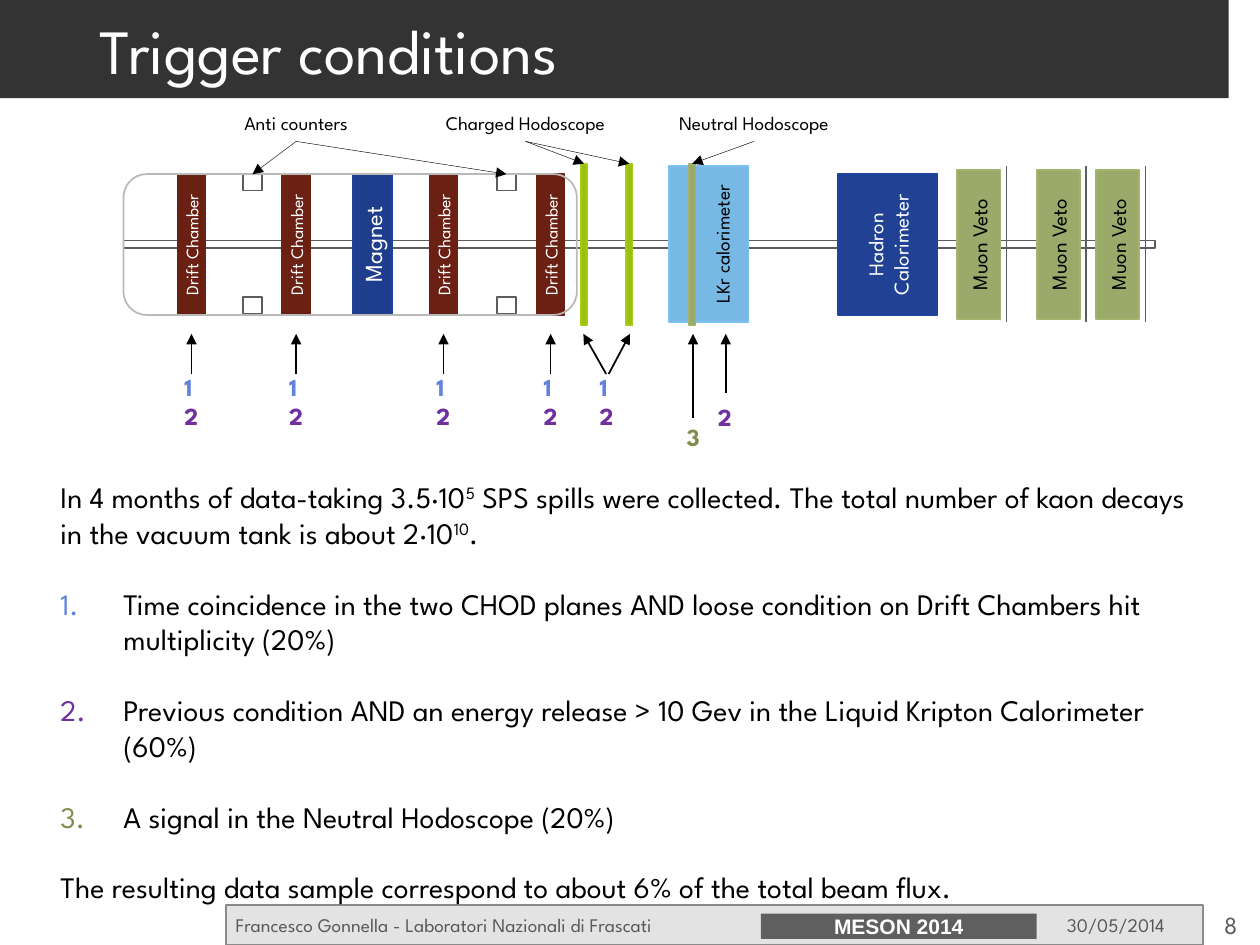
"""Build the slide on trigger conditions along a detector beam line."""
from dataclasses import dataclass
from typing import Optional

from lxml import etree
from pptx import Presentation
from pptx import util as u
from pptx.dml.color import RGBColor
from pptx.enum import shapes, text
from pptx.oxml.ns import qn

FONT = "League Spartan"
WHITE = RGBColor(0xFF, 0xFF, 0xFF)
BLACK = RGBColor(0, 0, 0)
CHARCOAL = RGBColor(0x33, 0x33, 0x33)
TILE_GREY = RGBColor(0x5F, 0x5F, 0x5F)
TEXT_GREY = RGBColor(0x59, 0x59, 0x59)
OUTLINE = RGBColor(0x5C, 0x5C, 0x5C)
TANK_LINE = RGBColor(0xB9, 0xB9, 0xB9)
BAR = RGBColor(0xE3, 0xE3, 0xE3)
BAR_LINE = RGBColor(0x8B, 0x8B, 0x8B)
BROWN = RGBColor(0x6A, 0x20, 0x13)
BROWN_LINE = RGBColor(0x71, 0x1F, 0x12)
NAVY = RGBColor(0x1E, 0x3E, 0x8D)
HADRON = RGBColor(0x20, 0x41, 0x94)
NAVY_LINE = RGBColor(0x1E, 0x43, 0x9E)
SKY = RGBColor(0x77, 0xB8, 0xE4)
SKY_LINE = RGBColor(0x7A, 0xC2, 0xF2)
OLIVE = RGBColor(0x9B, 0xA9, 0x6B)
OLIVE_LINE = RGBColor(0xA3, 0xB3, 0x6E)
LIME = RGBColor(0x9B, 0xBF, 0x15)
LIME_LINE = RGBColor(0xA5, 0xCC, 0x12)
TRIGGER = {"1": RGBColor(0x60, 0x84, 0xDD), "2": RGBColor(0x70, 0x30, 0xA0),
           "3": RGBColor(0x7E, 0x8C, 0x4D)}

CHAMBER_X = (3.58, 5.69, 8.66, 10.82)
CHAMBER_W = 0.56
CHARGED_X = (11.71, 12.62)
MUON_X = (19.3, 20.9, 22.1)
TANK_Y, TANK_H = 3.51, 2.84
ARROW_TIP = 6.73


@dataclass
class Box:
    x: float
    y: float
    w: float
    h: float
    fill: Optional[RGBColor] = None
    line: Optional[RGBColor] = None
    label: str = ""
    size: float = 12
    color: RGBColor = WHITE
    bold: bool = False
    vertical: bool = True
    font: str = FONT
    shape: shapes.MSO_SHAPE = shapes.MSO_SHAPE.RECTANGLE


@dataclass
class Caption:
    x: float
    y: float
    w: float
    h: float
    label: str
    size: float = 11
    color: RGBColor = BLACK
    align: text.PP_ALIGN = text.PP_ALIGN.LEFT
    wrap: bool = True
    anchor: text.MSO_ANCHOR = text.MSO_ANCHOR.MIDDLE


@dataclass
class Arrow:
    x1: float
    y1: float
    x2: float
    y2: float = ARROW_TIP


def style(r, size: float, color: RGBColor, bold: bool = False, font: str = FONT) -> None:
    """Format one run."""
    r.font.name, r.font.size, r.font.bold = font, u.Pt(size), bold
    r.font.color.rgb = color


def set_vertical(tf) -> None:
    """Turn the text to read upwards."""
    tf._txBody.bodyPr.set("vert", "vert270")


def draw_box(slide, b: Box):
    """Draw a detector part or another filled shape."""
    s = slide.shapes.add_shape(b.shape, u.Cm(b.x), u.Cm(b.y), u.Cm(b.w), u.Cm(b.h))
    s.shadow.inherit = False
    if b.fill is None:
        s.fill.background()
    else:
        s.fill.solid()
        s.fill.fore_color.rgb = b.fill
    if b.line is None:
        s.line.fill.background()
    else:
        s.line.color.rgb, s.line.width = b.line, u.Pt(1)
    if b.label:
        tf = s.text_frame
        tf.text = b.label
        tf.vertical_anchor = text.MSO_ANCHOR.MIDDLE
        tf.margin_left = tf.margin_right = tf.margin_top = tf.margin_bottom = 0
        if b.vertical:
            set_vertical(tf)
        p = tf.paragraphs[0]
        p.alignment = text.PP_ALIGN.CENTER
        for r in p.runs:
            style(r, b.size, b.color, b.bold, b.font)
    return s


def draw_caption(slide, c: Caption):
    """Draw a text box with one run in each paragraph."""
    s = slide.shapes.add_textbox(u.Cm(c.x), u.Cm(c.y), u.Cm(c.w), u.Cm(c.h))
    tf = s.text_frame
    tf.text = c.label
    tf.word_wrap = c.wrap
    tf.vertical_anchor = c.anchor
    for p in tf.paragraphs:
        p.alignment = c.align
        for r in p.runs:
            style(r, c.size, c.color)
    return s


def draw_line(slide, a: Arrow, color: RGBColor = BLACK, width: float = 1, arrow: bool = True):
    """Draw a straight connector, with an arrowhead at its end if asked."""
    s = slide.shapes.add_connector(shapes.MSO_CONNECTOR.STRAIGHT, u.Cm(a.x1), u.Cm(a.y1),
                                   u.Cm(a.x2), u.Cm(a.y2))
    s.line.color.rgb, s.line.width = color, u.Pt(width)
    if arrow:
        etree.SubElement(s.line._get_or_add_ln(), qn("a:tailEnd"), type="triangle")
    etree.SubElement(s._element.spPr, qn("a:effectLst"))
    return s


def draw_pointers(slide, label: Caption, targets) -> None:
    """Draw a label and join it to the top of each part it names."""
    caption = draw_caption(slide, label)
    for target in targets:
        s = draw_line(slide, Arrow(0, 0, 1, 1), width=0.25)
        s.begin_connect(caption, 2)
        s.end_connect(target, 0)


def draw_digits(slide, x: float, y: float, digits: str) -> None:
    """Stack trigger numbers in their own colours."""
    s = draw_caption(slide, Caption(x, y, 0.79, 0.25 + 0.6 * len(digits), "\n".join(digits), 14,
                                    wrap=False, anchor=text.MSO_ANCHOR.TOP))
    for p, digit in zip(s.text_frame.paragraphs, digits):
        style(p.runs[0], 14, TRIGGER[digit], True)


def draw_body(slide) -> None:
    """Write the data sample summary and the numbered trigger conditions."""
    tf = slide.shapes.add_textbox(u.Cm(0.97), u.Cm(9.53), u.Cm(23.27), u.Cm(8.2)).text_frame
    tf.word_wrap = True
    p = tf.paragraphs[0]
    for part, raised in (("In 4 months of data-taking 3.5·10", False), ("5", True),
                         (" SPS spills were collected. The total number of kaon decays in the "
                          "vacuum tank is about 2·10", False), ("10", True), (".", False)):
        r = p.add_run()
        r.text = part
        style(r, 17, BLACK)
        if raised:
            r.font._element.set("baseline", "30000")
    for number, line in (
            ("1", "Time coincidence in the two CHOD planes AND loose condition on Drift Chambers "
                  "hit multiplicity (20%)"),
            ("2", "Previous condition AND an energy release > 10 Gev in the Liquid Kripton "
                  "Calorimeter (60%)"),
            ("3", "A signal in the Neutral Hodoscope (20%)"),
            ("", "The resulting data sample correspond to about 6% of the total beam flux.")):
        p = tf.add_paragraph()
        p.text = line
        p.space_before = u.Pt(20)
        style(p.runs[0], 17, BLACK)
        if number:
            pPr = p._p.get_or_add_pPr()
            pPr.set("marL", str(u.Cm(1.27)))
            pPr.set("indent", str(-u.Cm(1.27)))
            color = etree.SubElement(pPr, qn("a:buClr"))
            etree.SubElement(color, qn("a:srgbClr"), val=str(TRIGGER[number]))
            etree.SubElement(pPr, qn("a:buAutoNum"), type="arabicPeriod")


def draw_title(slide) -> None:
    """Format the title band."""
    s = slide.shapes.title
    s.left, s.top, s.width, s.height = u.Cm(0), u.Cm(0), u.Cm(24.77), u.Cm(1.98)
    s.fill.solid()
    s.fill.fore_color.rgb = CHARCOAL
    tf = s.text_frame
    tf.text = "Trigger conditions"
    tf.auto_size = text.MSO_AUTO_SIZE.NONE
    tf.vertical_anchor = text.MSO_ANCHOR.MIDDLE
    tf.margin_left, tf.margin_right = u.Cm(2), 0
    tf.paragraphs[0].alignment = text.PP_ALIGN.LEFT
    style(tf.paragraphs[0].runs[0], 36, WHITE)


def draw_footer(slide) -> None:
    """Draw the footer bar with author, conference, date and page."""
    draw_box(slide, Box(4.55, 18.24, 19.71, 0.81, BAR, BAR_LINE))
    draw_box(slide, Box(15.34, 18.42, 5.56, 0.51, TILE_GREY, label="MESON 2014", bold=True,
                        vertical=False, font="Arial"))
    author = "Francesco Gonnella - Laboratori Nazionali di Frascati"
    draw_caption(slide, Caption(4.5, 18.24, 10.77, 0.81, author, color=TEXT_GREY))
    draw_caption(slide, Caption(21.26, 18.24, 2.95, 0.81, "30/05/2014", color=TEXT_GREY))
    draw_caption(slide, Caption(24.23, 18.24, 1.17, 0.81, "8", 14, TEXT_GREY,
                                text.PP_ALIGN.CENTER))


def draw_detector(slide) -> None:
    """Draw the detector, its labels and the trigger marks below it."""
    draw_box(slide, Box(2.49, 4.85, 20.8, 0.15, line=OUTLINE))
    for x in CHAMBER_X:
        draw_box(slide, Box(x, TANK_Y, CHAMBER_W, TANK_H, BROWN, BROWN_LINE, "Drift Chamber", 10))
    draw_box(slide, Box(7.11, TANK_Y, 0.79, TANK_H, NAVY, NAVY_LINE, "Magnet", 14))
    draw_box(slide, Box(13.49, 3.35, 1.6, 3.15, SKY, SKY_LINE))
    lkr = draw_caption(slide, Caption(14.02, 3.35, 1.07, 3.15, "LKr calorimeter",
                                      align=text.PP_ALIGN.CENTER))
    set_vertical(lkr.text_frame)
    neutral = draw_box(slide, Box(13.89, 3.3, 0.13, 3.25, OLIVE, OLIVE_LINE))
    charged = [draw_box(slide, Box(x, 3.3, 0.13, 3.25, LIME, LIME_LINE)) for x in CHARGED_X]
    draw_box(slide, Box(16.89, TANK_Y, 2.01, TANK_H, HADRON, NAVY_LINE, "Hadron\vCalorimeter"))
    for x in MUON_X:
        draw_box(slide, Box(x, 3.43, 0.87, 3, OLIVE, OLIVE_LINE, "Muon Veto", color=BLACK))
        draw_line(slide, Arrow(x + 0.99, 3.35, x + 0.99, 6.5), OUTLINE, arrow=False)
    counters = [draw_box(slide, Box(x, y, 0.38, 0.33, line=OUTLINE))
                for y in (TANK_Y, 5.99) for x in (4.9, 10.02)]
    draw_box(slide, Box(2.49, TANK_Y, 9.14, TANK_H, line=TANK_LINE,
                        shape=shapes.MSO_SHAPE.ROUNDED_RECTANGLE))

    for x, w, label, targets in ((4.47, 3, "Anti counters", counters[:2]),
                                 (8.31, 4.57, "Charged Hodoscope", charged),
                                 (13.08, 4.24, "Neutral Hodoscope", [neutral])):
        draw_pointers(slide, Caption(x, 2.11, w, 0.74, label, align=text.PP_ALIGN.CENTER,
                                     wrap=False), targets)

    centres = [x + CHAMBER_W / 2 for x in CHAMBER_X]
    arrows = [Arrow(x, 7.54, x) for x in centres]
    arrows += [Arrow(12.22, 7.54, 11.76), Arrow(12.27, 7.54, 12.7),
               Arrow(13.97, 8.43, 13.97), Arrow(14.63, 7.92, 14.63)]
    for a in arrows:
        draw_line(slide, a)
    for x in centres + [12.23]:
        draw_digits(slide, x - 0.39, 7.37, "12")
    draw_digits(slide, 14.22, 7.97, "2")
    draw_digits(slide, 13.59, 8.38, "3")


def main() -> None:
    """Assemble and save the slide."""
    prs = Presentation()
    prs.slide_width, prs.slide_height = u.Cm(25.4), u.Cm(19.05)
    slide = prs.slides.add_slide(prs.slide_layouts[5])
    draw_footer(slide)
    draw_title(slide)
    draw_body(slide)
    draw_detector(slide)
    prs.save("out.pptx")


if __name__ == "__main__":
    main()
